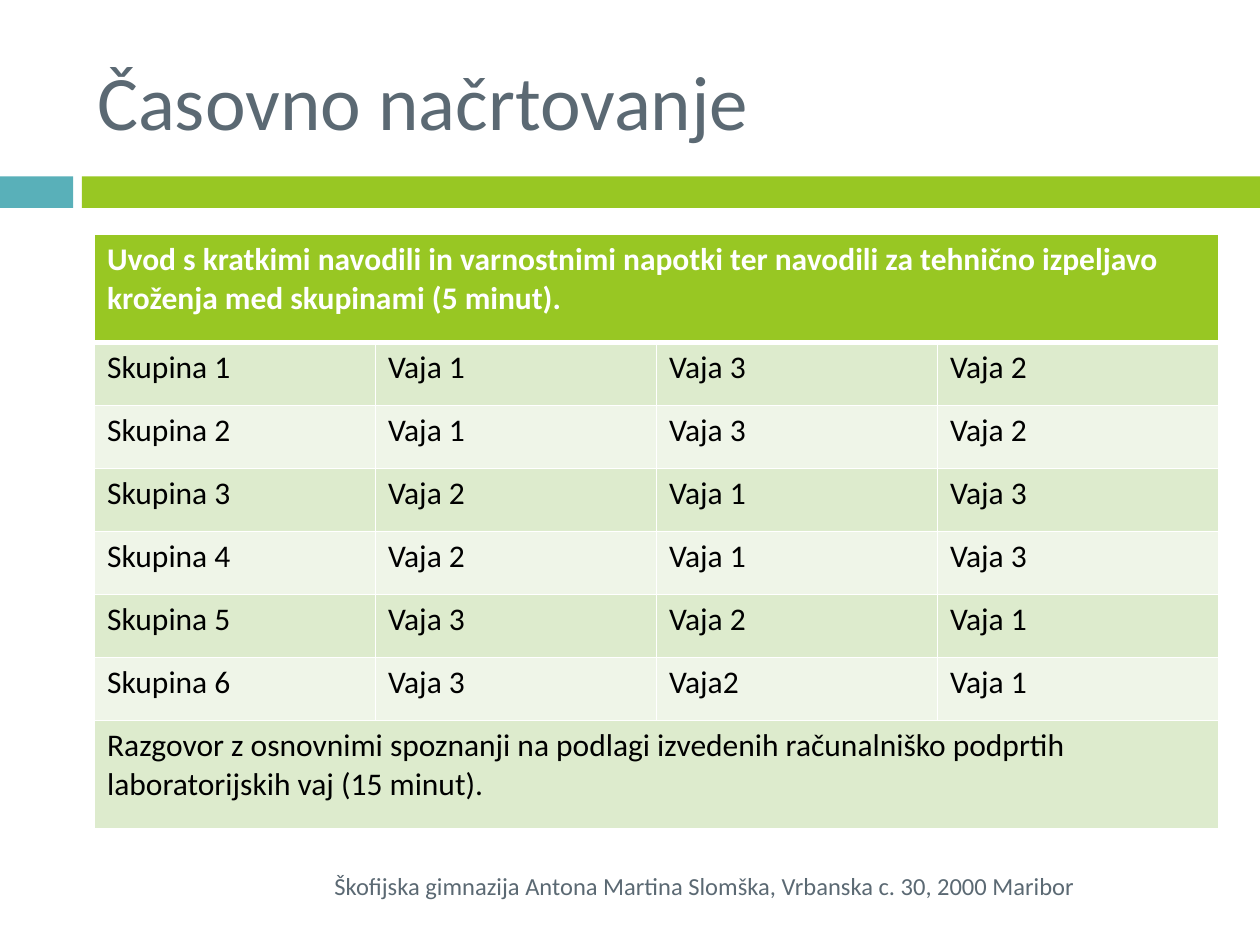
"""Build the lesson timing slide with its group rotation table."""
from lxml import etree
from pptx import Presentation
from pptx.dml.color import RGBColor
from pptx.enum.shapes import MSO_SHAPE
from pptx.enum.text import MSO_ANCHOR, PP_ALIGN
from pptx.oxml.ns import qn
from pptx.util import Inches, Pt

RECTANGLE = MSO_SHAPE.RECTANGLE
MIDDLE = MSO_ANCHOR.MIDDLE
LEFT, RIGHT = PP_ALIGN.LEFT, PP_ALIGN.RIGHT

WHITE = RGBColor(0xFF, 0xFF, 0xFF)
BLACK = RGBColor(0x00, 0x00, 0x00)
SLATE = RGBColor(0x5B, 0x69, 0x73)
TEAL = RGBColor(0x59, 0xB0, 0xB9)
GREEN = RGBColor(0x98, 0xC7, 0x23)
BANDS = (RGBColor(0xEF, 0xF5, 0xE8), RGBColor(0xDD, 0xEB, 0xCD))

FONT = "Calibri"
TITLE_ONLY = 5
COLUMNS = 4
TABLE_LEFT, TABLE_TOP, TABLE_WIDTH = 0.75, 1.86, 8.92
GROUP_HEIGHT, SPAN_HEIGHT = 0.5, 0.86

INTRO = ("Uvod s kratkimi navodili in varnostnimi napotki ter navodili za "
         "tehnično izpeljavo kroženja med skupinami (5 minut).")
CLOSING = ("Razgovor z osnovnimi spoznanji na podlagi izvedenih računalniško "
           "podprtih laboratorijskih vaj (15 minut).")
SCHOOL = "Škofijska gimnazija Antona Martina Slomška, Vrbanska c. 30, 2000 Maribor"
ROTATION = [
    ("Vaja 1", "Vaja 3", "Vaja 2"),
    ("Vaja 1", "Vaja 3", "Vaja 2"),
    ("Vaja 2", "Vaja 1", "Vaja 3"),
    ("Vaja 2", "Vaja 1", "Vaja 3"),
    ("Vaja 3", "Vaja 2", "Vaja 1"),
    ("Vaja 3", "Vaja2", "Vaja 1"),
]


def write(frame, text, size, color, bold=False, align=LEFT):
    """Put one formatted paragraph into a text frame."""
    frame.text = text
    paragraph = frame.paragraphs[0]
    paragraph.alignment = align
    font = paragraph.runs[0].font
    font.name, font.size, font.bold = FONT, Pt(size), bold
    font.color.rgb = color


def add_bar(slide, left, width, color):
    """Draw one part of the band under the title."""
    bar = slide.shapes.add_shape(RECTANGLE, Inches(left), Inches(1.4),
                                 Inches(width), Inches(0.25))
    bar.shadow.inherit = False
    bar.fill.solid()
    bar.fill.fore_color.rgb = color
    bar.line.fill.background()


def set_title(slide, text):
    """Place and format the slide title."""
    title = slide.shapes.title
    title.left, title.top = Inches(0.67), Inches(0.25)
    title.width, title.height = Inches(8.92), Inches(1.08)
    title.text_frame.vertical_anchor = MIDDLE
    write(title.text_frame, text, 44, SLATE)


def set_borders(cell, **widths):
    """Give a cell white borders, with widths in points by side."""
    properties = cell._tc.get_or_add_tcPr()
    for side in "LRTB":
        line = etree.SubElement(properties, qn(f"a:ln{side}"),
                                w=str(Pt(widths.get(side, 1))))
        fill = etree.SubElement(line, qn("a:solidFill"))
        etree.SubElement(fill, qn("a:srgbClr"), val=str(WHITE))


def add_schedule(slide):
    """Add the table: introduction, rotation of the groups, closing talk."""
    groups = [(f"Skupina {number}", *exercises)
              for number, exercises in enumerate(ROTATION, 1)]
    rows = [(INTRO,), *groups, (CLOSING,)]
    heights = [SPAN_HEIGHT if len(row) == 1 else GROUP_HEIGHT for row in rows]
    table = slide.shapes.add_table(
        len(rows), COLUMNS, Inches(TABLE_LEFT), Inches(TABLE_TOP),
        Inches(TABLE_WIDTH), Inches(sum(heights))).table
    for index, (texts, height) in enumerate(zip(rows, heights)):
        table.rows[index].height = Inches(height)
        header = index == 0
        for column in range(COLUMNS):
            cell = table.cell(index, column)
            set_borders(cell, T=3 if index == 1 else 1, B=3 if header else 1)
            cell.fill.solid()
            cell.fill.fore_color.rgb = GREEN if header else BANDS[index % 2]
        if len(texts) == 1:
            table.cell(index, 0).merge(table.cell(index, COLUMNS - 1))
        for column, text in enumerate(texts):
            write(table.cell(index, column).text_frame, text, 18,
                  WHITE if header else BLACK, bold=header)


def add_footer(slide, text):
    """Add the right-aligned school address."""
    footer = slide.shapes.add_textbox(Inches(0.67), Inches(6.83),
                                      Inches(7.96), Inches(0.4))
    footer.text_frame.word_wrap = True
    footer.text_frame.vertical_anchor = MIDDLE
    write(footer.text_frame, text, 14, SLATE, align=RIGHT)


def main():
    """Build and save the slide."""
    deck = Presentation()
    deck.slide_width, deck.slide_height = Inches(10), Inches(7.5)
    slide = deck.slides.add_slide(deck.slide_layouts[TITLE_ONLY])
    add_bar(slide, 0, 0.58, TEAL)
    add_bar(slide, 0.65, 9.35, GREEN)
    set_title(slide, "Časovno načrtovanje")
    add_schedule(slide)
    add_footer(slide, SCHOOL)
    deck.save("out.pptx")


if __name__ == "__main__":
    main()
